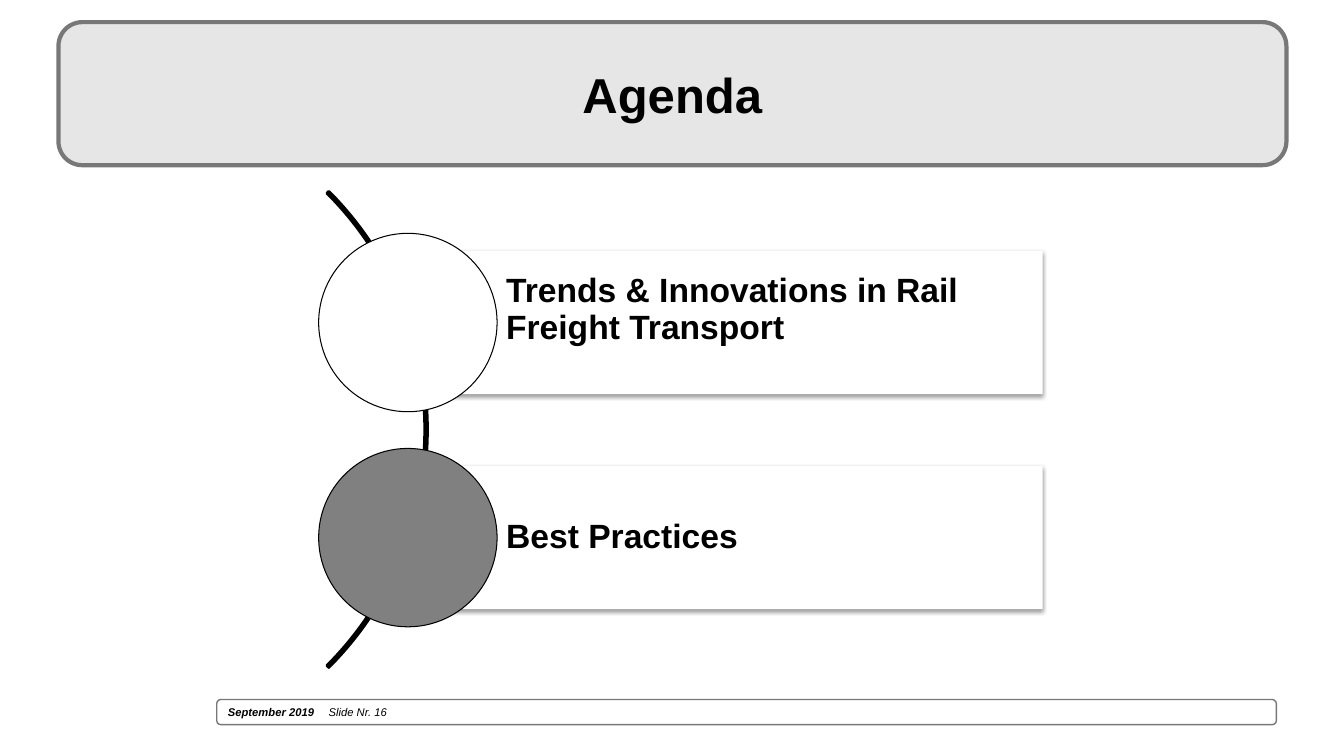
from dataclasses import dataclass

import pptx
import pptx.dml.color
import pptx.enum.shapes
import pptx.enum.text
import pptx.oxml
import pptx.oxml.ns
import pptx.util
from pptx.shapes.autoshape import Shape
from pptx.slide import Slide
from pptx.text.text import _Run as Run

SHAPES = pptx.enum.shapes.MSO_SHAPE
ALIGN = pptx.enum.text.PP_ALIGN
COLORS = {"white": "FFFFFF", "black": "000000", "panel": "E7E6E6",
          "border": "787878", "done": "808080"}
FONT = "Arial"

# The slide is a grid of 100 columns by 100 rows
WIDTH, HEIGHT = pptx.util.Inches(13.33), pptx.util.Inches(7.5)
COL, ROW = WIDTH / 100, HEIGHT / 100


@dataclass(frozen=True)
class Box:
    col: float
    row: float
    cols: float
    rows: float


@dataclass(frozen=True)
class Topic:
    text: str
    marker: str
    bottom_rows: float  # lower inset, lifts the text


HEADER = Box(4.35, 2.93, 91.37, 18.93)
FOOTER = Box(16.13, 92.53, 78.84, 3.33)
ARC = Box(-18.3, 12.27, 50.11, 89.07)
FIRST_TOPIC = Box(29.26, 33.2, 48.31, 18.93)
TOPIC_PITCH = 28.45
MARKER_COL, MARKER_COLS, MARKER_ROWS = 23.71, 13.28, 23.6
TEXT_COLS, INSET = 8.4, pptx.util.Inches(0.07)

TOPICS = [
    Topic("Trends & Innovations in Rail Freight Transport", "white", 4.2),
    Topic("Best Practices", "done", 0.93),
]


def rgb(name: str) -> pptx.dml.color.RGBColor:
    return pptx.dml.color.RGBColor.from_string(COLORS[name])


def draw(slide: Slide, kind: SHAPES, box: Box, fill: str,
         line: str = "", weight: float = 0) -> Shape:
    shape = slide.shapes.add_shape(kind, round(box.col * COL), round(box.row * ROW),
                                   round(box.cols * COL), round(box.rows * ROW))
    shape.shadow.inherit = False
    shape.fill.solid()
    shape.fill.fore_color.rgb = rgb(fill)
    if line:
        shape.line.color.rgb = rgb(line)
        shape.line.width = pptx.util.Pt(weight)
    else:
        shape.line.fill.background()
    shape.text_frame.vertical_anchor = pptx.enum.text.MSO_ANCHOR.MIDDLE
    return shape


def style(run: Run, size: float, bold: bool = True, italic: bool = False) -> None:
    run.font.name = FONT
    run.font.size = pptx.util.Pt(size)
    run.font.bold = bold
    run.font.italic = italic
    run.font.color.rgb = rgb("black")


def write(shape: Shape, text: str, size: float, align: ALIGN) -> None:
    shape.text_frame.text = text
    paragraph = shape.text_frame.paragraphs[0]
    paragraph.alignment = align
    style(paragraph.runs[0], size)


def cast_shadow(shape: Shape) -> None:
    effects = shape._element.spPr.find(pptx.oxml.ns.qn("a:effectLst"))
    effects.append(pptx.oxml.parse_xml(
        f'<a:outerShdw {pptx.oxml.ns.nsdecls("a")} blurRad="{pptx.util.Pt(3.1)}" '
        f'dist="{pptx.util.Pt(1.6)}" dir="5400000" rotWithShape="0">'
        f'<a:srgbClr val="{COLORS["black"]}"><a:alpha val="38000"/></a:srgbClr>'
        '</a:outerShdw>'))


def draw_topic(slide: Slide, topic: Topic, index: int) -> None:
    row = FIRST_TOPIC.row + index * TOPIC_PITCH
    card = draw(slide, SHAPES.RECTANGLE,
                Box(FIRST_TOPIC.col, row, FIRST_TOPIC.cols, FIRST_TOPIC.rows), "white")
    cast_shadow(card)
    frame = card.text_frame
    frame.margin_left = round(TEXT_COLS * COL)
    frame.margin_right = frame.margin_top = INSET
    frame.margin_bottom = round(topic.bottom_rows * ROW)
    write(card, topic.text, 24, ALIGN.LEFT)
    frame.paragraphs[0].line_spacing = 0.9

    marker_row = row + (FIRST_TOPIC.rows - MARKER_ROWS) / 2
    draw(slide, SHAPES.OVAL, Box(MARKER_COL, marker_row, MARKER_COLS, MARKER_ROWS),
         topic.marker, "black", 0.75)


def draw_footer(slide: Slide) -> None:
    footer = draw(slide, SHAPES.ROUNDED_RECTANGLE, FOOTER, "white", "border", 1)
    line = footer.text_frame.paragraphs[0]
    line.alignment = ALIGN.LEFT
    for text, bold in (("September 2019\t", True), ("Slide Nr. 16", False)):
        run = line.add_run()
        run.text = text
        style(run, 8, bold, italic=True)


def main() -> None:
    deck = pptx.Presentation()
    deck.slide_width, deck.slide_height = WIDTH, HEIGHT
    slide = deck.slides.add_slide(deck.slide_layouts[6])

    # Footer and title
    draw_footer(slide)
    header = draw(slide, SHAPES.ROUNDED_RECTANGLE, HEADER, "panel", "border", 3)
    write(header, "Agenda", 35, ALIGN.CENTER)

    # Arc that links the topics, from -45 to 45 degrees
    arc = draw(slide, SHAPES.BLOCK_ARC, ARC, "white", "black", 2)
    for position, value in enumerate((189, 27, 0.004)):
        arc.adjustments[position] = value

    # Topics
    for index, topic in enumerate(TOPICS):
        draw_topic(slide, topic, index)

    deck.save("out.pptx")


if __name__ == "__main__":
    main()
